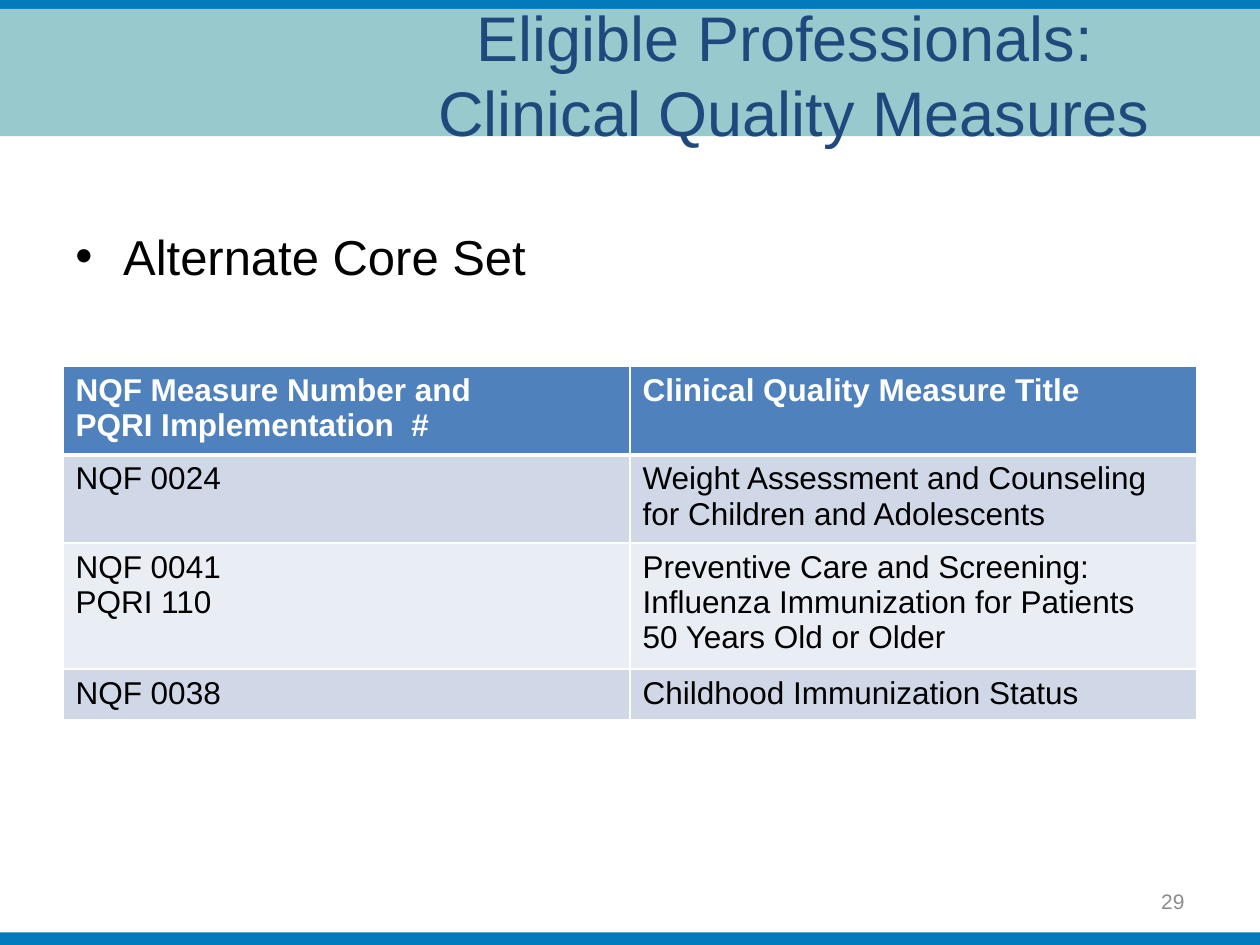
from lxml import etree
from pptx import Presentation
from pptx import util as u
from pptx.dml.color import RGBColor
from pptx.enum import shapes, text
from pptx.oxml.ns import qn

BLUE, TEAL, NAVY = "027ABB", "98C9CD", "1F497D"
WHITE, BLACK, GRAY = "FFFFFF", "000000", "8C8C8C"
HEADER, BAND_DARK, BAND_LIGHT = "4F81BD", "D0D8E8", "E9EDF4"

MEASURES = [
    ("NQF Measure Number and\nPQRI Implementation  #", "Clinical Quality Measure Title"),
    ("NQF 0024", "Weight Assessment and Counseling for Children and Adolescents"),
    ("NQF 0041\nPQRI 110",
     "Preventive Care and Screening: Influenza Immunization for Patients\n50 Years Old or Older"),
    ("NQF 0038", "Childhood Immunization Status"),
]
ROW_HEIGHTS = (0.66, 0.66, 0.94, 0.4)


def color(value):
    return RGBColor.from_string(value)


def inches(*values):
    return [u.Inches(value) for value in values]


class SlideBuilder:
    font = "Arial"

    def __init__(self, slide):
        self.slide = slide

    def style(self, frame, size, fill, align=None, bold=False):
        for para in frame.paragraphs:
            para.alignment = align
            for span in para.runs:
                span.font.name = self.font
                span.font.size = u.Pt(size)
                span.font.bold = bold
                span.font.color.rgb = color(fill)

    def band(self, top, height, fill):
        """Draw a bar across the full width of the slide."""
        bar = self.slide.shapes.add_shape(
            shapes.MSO_SHAPE.RECTANGLE, *inches(0, top, 10, height))
        bar.shadow.inherit = False
        bar.fill.solid()
        bar.fill.fore_color.rgb = color(fill)
        bar.line.fill.background()

    def title(self, words, area):
        box = self.slide.shapes.title
        box.left, box.top, box.width, box.height = inches(*area)
        frame = box.text_frame
        frame.text = words
        frame.word_wrap = True
        frame.auto_size = text.MSO_AUTO_SIZE.NONE
        frame.vertical_anchor = text.MSO_ANCHOR.MIDDLE
        self.style(frame, 36, NAVY, text.PP_ALIGN.CENTER)
        # Bring the title in front of the bands
        self.slide.shapes._spTree.append(box._element)

    def text_box(self, words, area, size, fill, align=None, anchor=text.MSO_ANCHOR.TOP):
        frame = self.slide.shapes.add_textbox(*inches(*area)).text_frame
        frame.word_wrap = True
        frame.vertical_anchor = anchor
        frame.text = words
        self.style(frame, size, fill, align)
        return frame

    def bullet(self, words, area):
        frame = self.text_box(words, area, 28, BLACK)
        props = frame.paragraphs[0]._p.get_or_add_pPr()
        indent = u.Inches(0.38)
        props.set("marL", str(indent))
        props.set("indent", str(-indent))
        etree.SubElement(props, qn("a:buFont")).set("typeface", self.font)
        etree.SubElement(props, qn("a:buChar")).set("char", "•")

    def table(self, rows, heights, area):
        table = self.slide.shapes.add_table(
            len(rows), len(rows[0]), *inches(*area)).table
        for row, height in zip(table.rows, heights):
            row.height = u.Inches(height)
        for r, row in enumerate(rows):
            is_header = r == 0
            fill = HEADER if is_header else BAND_DARK if r % 2 else BAND_LIGHT
            for c, words in enumerate(row):
                cell = table.cell(r, c)
                cell.text_frame.text = words
                self.style(cell.text_frame, 18, WHITE if is_header else BLACK, bold=is_header)
                self.borders(cell, top=3 if r == 1 else 1, bottom=3 if is_header else 1)
                cell.fill.solid()
                cell.fill.fore_color.rgb = color(fill)

    def borders(self, cell, top, bottom):
        """Give a cell white edges, with widths in points."""
        props = cell._tc.get_or_add_tcPr()
        for tag, width in (("lnL", 1), ("lnR", 1), ("lnT", top), ("lnB", bottom)):
            line = etree.SubElement(props, qn(f"a:{tag}"), w=str(u.Pt(width)))
            fill = etree.SubElement(line, qn("a:solidFill"))
            etree.SubElement(fill, qn("a:srgbClr"), val=WHITE)


def main():
    deck = Presentation()
    deck.slide_width, deck.slide_height = inches(10, 7.5)
    page = SlideBuilder(deck.slides.add_slide(deck.slide_layouts[5]))

    page.band(0, 0.25, BLUE)
    page.band(0.07, 1.01, TEAL)
    page.band(7.4, 0.1, BLUE)
    page.title("Eligible Professionals: \vClinical Quality Measures", (2.6, 0.09, 7.4, 0.99))
    page.bullet("Alternate Core Set", (0.5, 1.75, 9, 1.16))
    page.table(MEASURES, ROW_HEIGHTS, (0.5, 2.91, 9, sum(ROW_HEIGHTS)))
    page.text_box("29", (7.17, 6.95, 2.33, 0.4), 12, GRAY,
                  text.PP_ALIGN.RIGHT, text.MSO_ANCHOR.MIDDLE)

    deck.save("out.pptx")


if __name__ == "__main__":
    main()
